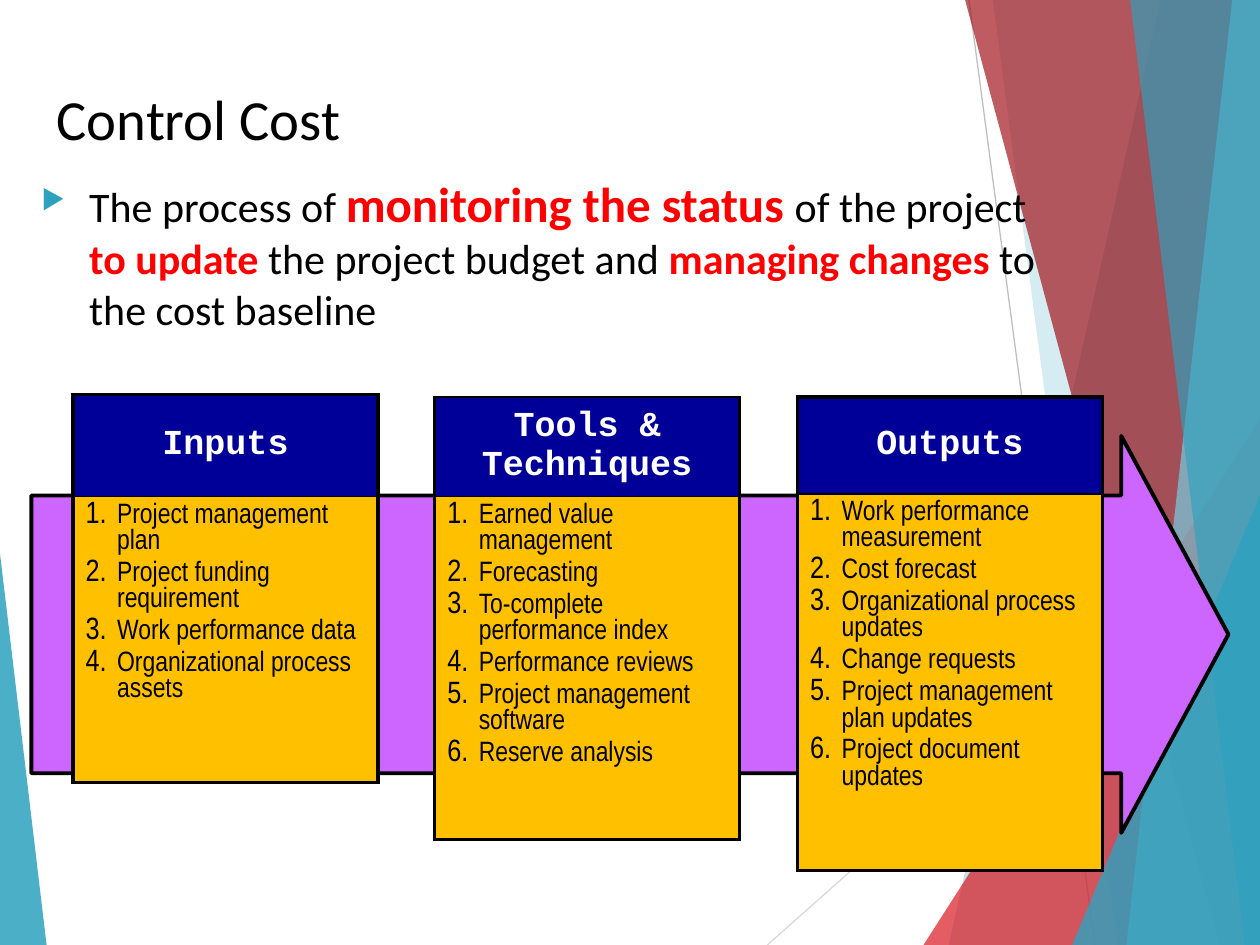
from dataclasses import dataclass

from lxml.etree import SubElement
from pptx import Presentation
from pptx.dml.color import RGBColor
from pptx.enum.shapes import MSO_CONNECTOR, MSO_SHAPE
from pptx.enum.text import MSO_ANCHOR, PP_ALIGN
from pptx.oxml import parse_xml
from pptx.oxml.ns import nsdecls, qn
from pptx.util import Emu, Inches, Pt

COLUMNS, ROWS = 100, 75
SLIDE_WIDTH, SLIDE_HEIGHT = Inches(10), Inches(7.5)
BLACK, WHITE, RED, TEAL = "000000", "FFFFFF", "FF0000", "2DA2BF"
PANEL_WIDTH = 24.2


@dataclass(frozen=True)
class Line:
    start: tuple[float, float]
    end: tuple[float, float]
    color: str


@dataclass(frozen=True)
class Ribbon:
    top: float
    bottom: float
    color: str
    opacity: int


@dataclass(frozen=True)
class Wedge:
    box: tuple[float, float, float, float]
    apex: float
    color: str
    opacity: int


@dataclass(frozen=True)
class TextRun:
    text: str
    size: float = 24
    color: str = BLACK
    bold: bool = False
    font: str = "Calibri"


@dataclass(frozen=True)
class Panel:
    heading: str
    left: float
    top: float
    heights: tuple[float, float]
    top_border: float
    items: tuple[str, ...]


BACKDROP = (
    Line((76.9, 0), (86.9, 75), "BFBFBF"),
    Line((100, 40.3), (60.9, 75), "D9D9D9"),
    Ribbon(92.1, 75.3, TEAL, 30),
    Ribbon(78.8, 88.7, TEAL, 20),
    Wedge((73.3, 33.3, 26.7, 41.7), 1, "DA1F28", 72),
    Ribbon(76.6, 96.8, "A3171E", 70),
    Ribbon(97.8, 89.4, "7ACBE0", 70),
    Ribbon(89.7, 98.8, TEAL, 65),
    Wedge((85.1, 39.3, 14.9, 35.7), 1, TEAL, 80),
    Wedge((0, 43.9, 3.7, 31.1), 0, TEAL, 85),
)

DEFINITION = (
    TextRun("The process of "),
    TextRun("monitoring the status ", 28, RED, True),
    TextRun("of the project "),
    TextRun("to update ", color=RED, bold=True),
    TextRun("the project budget and "),
    TextRun("managing changes ", color=RED, bold=True),
    TextRun("to the cost baseline"),
)

PANELS = (
    Panel("Inputs", 5.8, 31.3, (8.1, 22.7), 2.25, (
        "Project management plan", "Project funding requirement",
        "Work performance data", "Organizational process assets")),
    Panel("Tools & Techniques", 34.5, 31.5, (7.9, 23.4), 1, (
        "Earned value management", "Forecasting", "To-complete performance index",
        "Performance reviews", "Project management software", "Reserve analysis")),
    Panel("Outputs", 63.3, 31.5, (7.7, 23.7), 2.25, (
        "Work performance measurement", "Cost forecast",
        "Organizational process updates", "Change requests",
        "Project management plan updates", "Project document updates")),
)


def across(columns: float) -> Emu:
    return Emu(round(SLIDE_WIDTH * columns / COLUMNS))


def down(rows: float) -> Emu:
    return Emu(round(SLIDE_HEIGHT * rows / ROWS))


def place(left: float, top: float, width: float, height: float) -> tuple:
    return across(left), down(top), across(width), down(height)


def paint(color_format, color: str) -> None:
    color_format.rgb = RGBColor.from_string(color)


def fill_solid(item, color: str, opacity: int = 100) -> None:
    item.fill.solid()
    paint(item.fill.fore_color, color)
    if opacity < 100:
        for tag in item.fill._xPr.iter(qn("a:srgbClr")):
            SubElement(tag, qn("a:alpha")).set("val", str(opacity * 1000))


def draw_backdrop(slide, part: Line | Ribbon | Wedge) -> None:
    if isinstance(part, Line):
        connector = slide.shapes.add_connector(
            MSO_CONNECTOR.STRAIGHT, across(part.start[0]), down(part.start[1]),
            across(part.end[0]), down(part.end[1]))
        paint(connector.line.color, part.color)
        connector.line.width = Pt(0.75)
        SubElement(connector._element.spPr, qn("a:effectLst"))
        return
    if isinstance(part, Ribbon):
        builder = slide.shapes.build_freeform(across(part.top), 0)
        builder.add_line_segments([
            (across(COLUMNS), 0), (across(COLUMNS), down(ROWS)),
            (across(part.bottom), down(ROWS))], close=True)
        shape = builder.convert_to_shape()
    else:
        shape = slide.shapes.add_shape(MSO_SHAPE.ISOSCELES_TRIANGLE, *place(*part.box))
        shape.adjustments[0] = part.apex
    shape.shadow.inherit = False
    fill_solid(shape, part.color, part.opacity)
    shape.line.fill.background()


def add_run(paragraph, content: TextRun) -> None:
    run = paragraph.add_run()
    run.text = content.text
    run.font.name = content.font
    run.font.size = Pt(content.size)
    run.font.bold = content.bold
    paint(run.font.color, content.color)


def add_bullet(paragraph, indent: float, size: int, tag: str, attribute: str,
               value: str, color: str) -> None:
    properties = paragraph._p.get_or_add_pPr()
    properties.set("marL", str(across(indent)))
    properties.set("indent", str(-across(indent)))
    bullet_color = SubElement(properties, qn("a:buClr"))
    SubElement(bullet_color, qn("a:srgbClr")).set("val", color)
    SubElement(properties, qn("a:buSzPct")).set("val", str(size * 1000))
    SubElement(properties, qn(tag)).set(attribute, value)


def add_text(slide, box: tuple, runs: tuple[TextRun, ...]):
    frame = slide.shapes.add_textbox(*place(*box)).text_frame
    frame.word_wrap = True
    for content in runs:
        add_run(frame.paragraphs[0], content)
    return frame


def set_borders(cell, top: float, bottom: float) -> None:
    properties = cell._tc.get_or_add_tcPr()
    sides = (("L", 2.25), ("R", 2.25), ("T", top), ("B", bottom))
    for position, (side, width) in enumerate(sides):
        properties.insert(position, parse_xml(
            f'<a:ln{side} {nsdecls("a")} w="{Pt(width)}"><a:solidFill>'
            f'<a:srgbClr val="{BLACK}"/></a:solidFill></a:ln{side}>'))


def draw_panel(slide, panel: Panel) -> None:
    box = place(panel.left, panel.top, PANEL_WIDTH, sum(panel.heights))
    table = slide.shapes.add_table(2, 1, *box).table
    table.first_row = table.horz_banding = False
    for row, height in zip(table.rows, panel.heights):
        row.height = down(height)
    heading, body = table.cell(0, 0), table.cell(1, 0)
    fill_solid(heading, "000099")
    set_borders(heading, panel.top_border, 1)
    heading.vertical_anchor = MSO_ANCHOR.MIDDLE
    title = heading.text_frame.paragraphs[0]
    title.alignment = PP_ALIGN.CENTER
    add_run(title, TextRun(panel.heading, 20, WHITE, True, "Courier New"))
    fill_solid(body, "FFC000")
    set_borders(body, 1, 2.25)
    for index, item in enumerate(panel.items):
        frame = body.text_frame
        paragraph = frame.add_paragraph() if index else frame.paragraphs[0]
        add_bullet(paragraph, 2.5, 110, "a:buAutoNum", "type", "arabicPeriod", BLACK)
        paragraph.space_before = Pt(3.2 if index else 0)
        add_run(paragraph, TextRun(item, 16, font="Arial Narrow"))


def main() -> None:
    presentation = Presentation()
    presentation.slide_width, presentation.slide_height = SLIDE_WIDTH, SLIDE_HEIGHT
    slide = presentation.slides.add_slide(presentation.slide_layouts[6])
    for part in BACKDROP:
        draw_backdrop(slide, part)
    title = add_text(slide, (2.5, 6.2, 83.3, 5), (TextRun("Control Cost", 32.4),))
    title.margin_left = across(2)
    definition = add_text(slide, (2.3, 13.3, 83.3, 15.8), DEFINITION)
    add_bullet(definition.paragraphs[0], 3.8, 64, "a:buChar", "char", "▶", TEAL)
    arrow = slide.shapes.add_shape(MSO_SHAPE.RIGHT_ARROW, *place(2.5, 34.6, 95, 31.5))
    arrow.adjustments[0], arrow.adjustments[1] = 0.7, 0.27
    arrow.shadow.inherit = False
    fill_solid(arrow, "CC66FF")
    paint(arrow.line.color, BLACK)
    arrow.line.width = Pt(2.25)
    for panel in PANELS:
        draw_panel(slide, panel)
    presentation.save("out.pptx")


if __name__ == "__main__":
    main()
